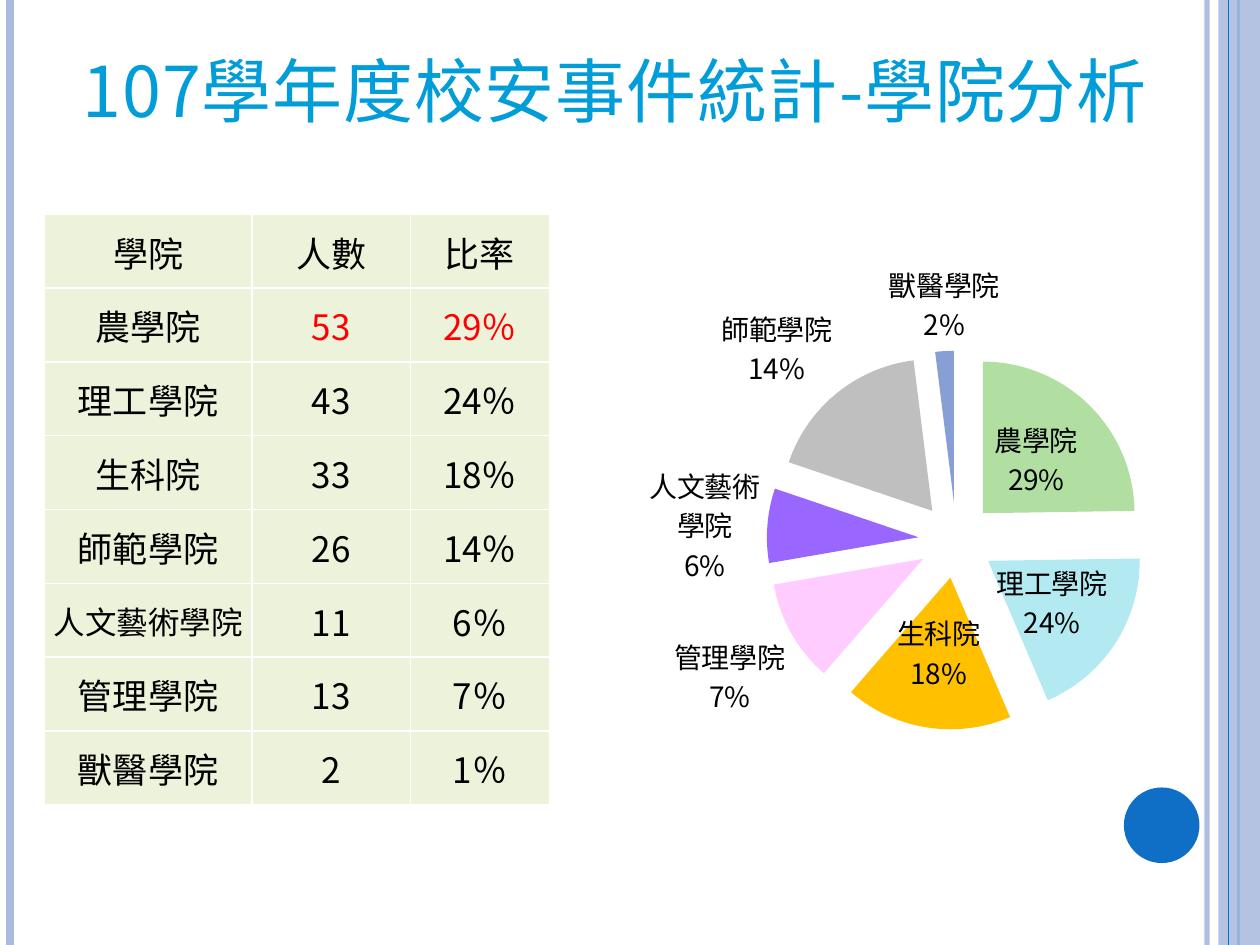
from dataclasses import dataclass

from lxml.etree import SubElement
from pptx import Presentation
from pptx.chart.data import CategoryChartData
from pptx.dml.color import RGBColor
from pptx.enum.chart import XL_CHART_TYPE, XL_LABEL_POSITION
from pptx.enum.shapes import MSO_CONNECTOR, MSO_SHAPE
from pptx.enum.text import MSO_ANCHOR, PP_ALIGN
from pptx.oxml import parse_xml
from pptx.oxml.ns import nsdecls, qn
from pptx.util import Inches, Pt


@dataclass(frozen=True)
class Theme:
    font: str = "Noto Sans CJK SC"
    title: str = "009DD9"
    text: str = "000000"
    highlight: str = "FF0000"
    cell: str = "EDF3DB"
    border: str = "FFFFFF"
    pale: str = "ABBBDF"
    accent: str = "0F6FC6"
    title_size: int = 40
    table_size: int = 20
    long_name_size: int = 18
    chart_size: int = 16


THEME = Theme()
TITLE = "107學年度校安事件統計-學院分析"
COLLEGE_ROWS = [
    ("學院", "人數", "比率"),
    ("農學院", "53", "29％"),
    ("理工學院", "43", "24％"),
    ("生科院", "33", "18％"),
    ("師範學院", "26", "14％"),
    ("人文藝術學院", "11", "6％"),
    ("管理學院", "13", "7％"),
    ("獸醫學院", "2", "1％"),
]
COLUMN_WIDTHS = [1.65, 1.26, 1.1]
ROW_HEIGHT = 0.586
HIGHLIGHT_ROW = 1
INSIDE, OUTSIDE = XL_LABEL_POSITION.CENTER, XL_LABEL_POSITION.OUTSIDE_END
SLICES = [
    ("農學院", 25, "B0DFA1", "農學院\n29%", INSIDE),
    ("理工學院", 19, "B3EAF2", "理工學院\n24%", INSIDE),
    ("生科院", 18, "FFC000", None, INSIDE),
    ("師範學院", 11, "FFCCFF", "管理學院\n7%", OUTSIDE),
    ("人文藝術學院", 8, "9966FF", "人文藝術學院\n6%", OUTSIDE),
    ("管理學院", 18, "BFBFBF", "師範學院\n14%", OUTSIDE),
    ("獸醫學院", 2, "879FD5", None, OUTSIDE),
]
PLOT_AREA = {"x": 0.26, "y": 0.18, "w": 0.59, "h": 0.65}
STRIPES = [
    (9.58, THEME.pale, 3, 93),
    (0.08, THEME.pale, 4.5, 100),
    (9.83, THEME.accent, 1.5, 100),
]
BAND_STRIPE = (9.75, THEME.accent, 0.75, 100)


def rgb(color):
    return RGBColor.from_string(color)


def style_font(font, size, color):
    font.size = Pt(size)
    font.bold = False
    font.color.rgb = rgb(color)
    font.name = THEME.font
    SubElement(font._element, qn("a:ea"), typeface=THEME.font)


def set_opacity(fill_parent, percent):
    if percent < 100:
        color = next(fill_parent.iter(qn("a:srgbClr")))
        SubElement(color, qn("a:alpha"), val=str(percent * 1000))


def add_stripe(slide, x, color, width, opacity):
    stripe = slide.shapes.add_connector(
        MSO_CONNECTOR.STRAIGHT, Inches(x), 0, Inches(x), Inches(7.5))
    stripe.line.color.rgb = rgb(color)
    stripe.line.width = Pt(width)
    properties = stripe._element.spPr
    set_opacity(properties, opacity)
    SubElement(properties, qn("a:effectLst"))


def add_solid(slide, preset, box, color, opacity=100):
    solid = slide.shapes.add_shape(preset, *map(Inches, box))
    solid.shadow.inherit = False
    solid.fill.solid()
    solid.fill.fore_color.rgb = rgb(color)
    solid.line.fill.background()
    set_opacity(solid._element.spPr, opacity)


def add_title(slide):
    frame = slide.shapes.add_textbox(
        *map(Inches, (0.51, 0.38, 8.74, 0.77))).text_frame
    frame.word_wrap = True
    frame.margin_top = Inches(0.13)
    heading = frame.paragraphs[0]
    heading.text = TITLE
    heading.alignment = PP_ALIGN.CENTER
    heading.line_spacing = 0.8
    style_font(heading.font, THEME.title_size, THEME.title)
    heading.font._element.set("spc", "50")


def fill_cell(cell, text, size, color):
    cell.margin_left = cell.margin_top = cell.margin_right = Inches(0.01)
    cell.margin_bottom = 0
    cell.vertical_anchor = MSO_ANCHOR.MIDDLE
    for side in ("lnL", "lnR", "lnT", "lnB"):
        cell._tc.get_or_add_tcPr().append(parse_xml(
            f'<a:{side} {nsdecls("a")} w="12700"><a:solidFill>'
            f'<a:srgbClr val="{THEME.border}"/></a:solidFill></a:{side}>'))
    cell.fill.solid()
    cell.fill.fore_color.rgb = rgb(THEME.cell)
    paragraph = cell.text_frame.paragraphs[0]
    paragraph.text = text
    paragraph.alignment = PP_ALIGN.CENTER
    style_font(paragraph.font, size, color)


def add_college_table(slide):
    box = (0.35, 1.7, sum(COLUMN_WIDTHS), ROW_HEIGHT * len(COLLEGE_ROWS))
    table = slide.shapes.add_table(
        len(COLLEGE_ROWS), len(COLUMN_WIDTHS), *map(Inches, box)).table
    table.first_row = table.horz_banding = False
    for column, width in zip(table.columns, COLUMN_WIDTHS):
        column.width = Inches(width)
    for r, values in enumerate(COLLEGE_ROWS):
        table.rows[r].height = Inches(ROW_HEIGHT)
        for c, text in enumerate(values):
            highlighted = r == HIGHLIGHT_ROW and c > 0
            fill_cell(table.cell(r, c), text,
                      THEME.long_name_size if len(text) > 5 else THEME.table_size,
                      THEME.highlight if highlighted else THEME.text)


def show_name_and_percent(labels):
    for flag, value in (("showVal", "0"), ("showCatName", "1"), ("showPercent", "1")):
        labels.find(qn(f"c:{flag}")).set("val", value)
    separator = parse_xml(f'<c:separator {nsdecls("c")}>\n</c:separator>')
    labels.find(qn("c:showBubbleSize")).addnext(separator)


def add_college_pie(slide):
    data = CategoryChartData()
    data.categories = [name for name, *_ in SLICES]
    data.add_series("Series 1", [value for _, value, *_ in SLICES])
    chart = slide.shapes.add_chart(
        XL_CHART_TYPE.PIE, *map(Inches, (4.76, 1.94, 5.1, 4.65)), data).chart
    chart.has_legend = chart.has_title = False
    style_font(chart.font, THEME.chart_size, THEME.text)
    plot = chart.plots[0]
    plot.vary_by_categories = True
    series = plot.series[0]
    series.data_labels.position = OUTSIDE
    show_name_and_percent(series.data_labels._element)
    for i, (_, _, color, caption, position) in enumerate(SLICES):
        point = series.points[i]
        point.format.fill.solid()
        point.format.fill.fore_color.rgb = rgb(color)
        point.format.line.fill.background()
        label = point.data_label
        if caption:
            label.text_frame.text = caption
            for paragraph in label.text_frame.paragraphs:
                style_font(paragraph.runs[0].font, THEME.chart_size, THEME.text)
        label.position = position
        show_name_and_percent(series.data_labels._element.findall(qn("c:dLbl"))[i])
    explosion = parse_xml(f'<c:explosion {nsdecls("c")} val="25"/>')
    series._element.find(qn("c:dPt")).addprevious(explosion)
    area = chart._chartSpace.chart.plotArea
    for layout in area.findall(qn("c:layout")):
        area.remove(layout)
    sizes = "".join(f'<c:{key} val="{value}"/>' for key, value in PLOT_AREA.items())
    area.insert(0, parse_xml(
        f'<c:layout {nsdecls("c")}><c:manualLayout><c:layoutTarget val="inner"/>'
        f'<c:xMode val="edge"/><c:yMode val="edge"/>{sizes}'
        '</c:manualLayout></c:layout>'))


def main():
    deck = Presentation()
    deck.slide_width, deck.slide_height = Inches(10), Inches(7.5)
    slide = deck.slides.add_slide(deck.slide_layouts[6])
    for stripe in STRIPES:
        add_stripe(slide, *stripe)
    add_solid(slide, MSO_SHAPE.RECTANGLE, (9.67, 0, 0.33, 7.5), THEME.pale, 87)
    add_stripe(slide, *BAND_STRIPE)
    add_solid(slide, MSO_SHAPE.OVAL, (8.92, 6.25, 0.6, 0.6), THEME.accent)
    add_title(slide)
    add_college_table(slide)
    add_college_pie(slide)
    deck.save("out.pptx")


if __name__ == "__main__":
    main()
